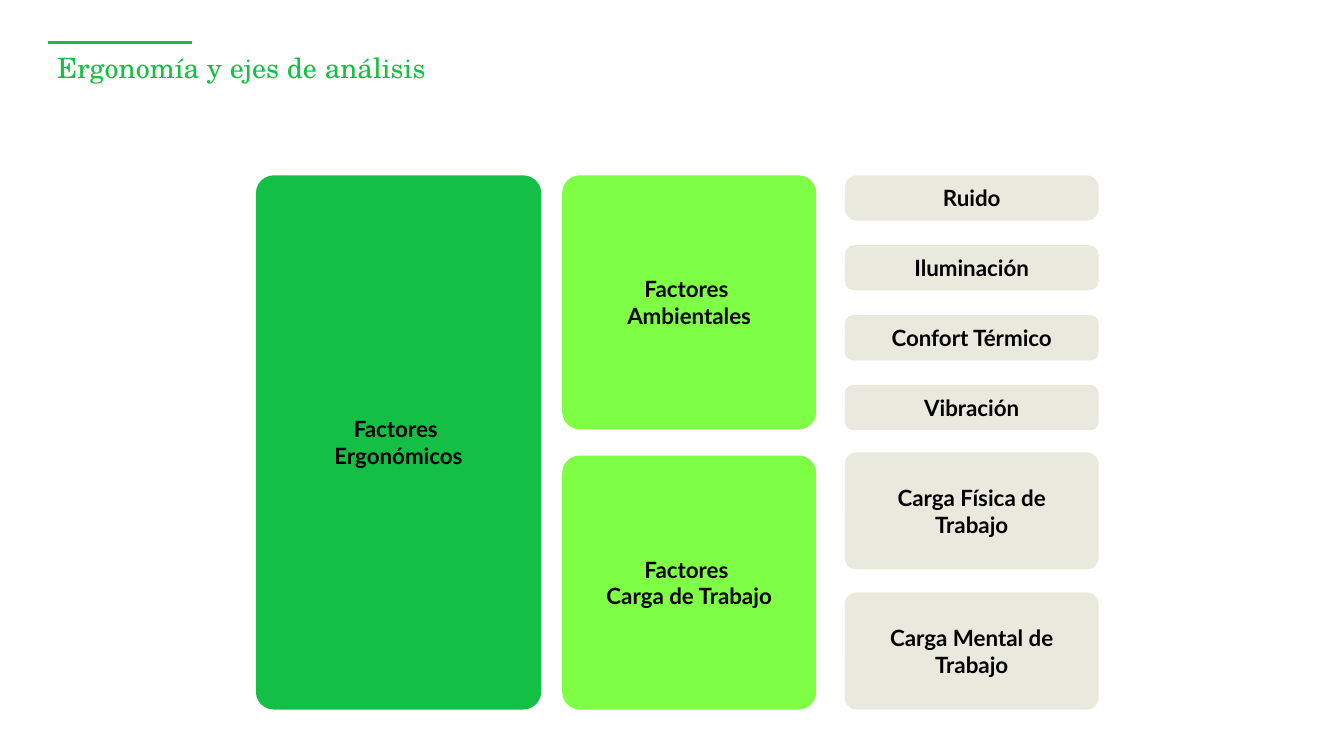
from dataclasses import dataclass

from lxml import etree
from pptx import Presentation
from pptx.dml.color import RGBColor
from pptx.enum import shapes, text
from pptx.oxml import ns
from pptx.slide import Slide
from pptx.util import Cm, Pt


@dataclass(frozen=True)
class Theme:
    title_color: RGBColor = RGBColor(0x15, 0xBF, 0x45)
    root_fill: RGBColor = RGBColor(0x13, 0xC0, 0x45)
    group_fill: RGBColor = RGBColor(0x7E, 0xFF, 0x45)
    factor_fill: RGBColor = RGBColor(0xE9, 0xEA, 0xDD)
    label_color: RGBColor = RGBColor(0, 0, 0)
    title_font: str = "TeX Gyre Schola"
    label_font: str = "Lato"
    title_size: int = 20
    label_size: int = 16
    label_spacing: int = 19
    rule_width: float = 1.75


@dataclass(frozen=True)
class Card:
    lines: tuple[str, ...]
    left: float
    top: float
    width: float
    height: float
    radius: float
    fill: RGBColor
    fixed_spacing: bool = True


THEME = Theme()
TOP = 4.42
COLUMN_WIDTH = 6.4
GROUP_LEFT, GROUP_PITCH = 14.17, 7.06
FACTOR_LEFT = 21.29
AMBIENT_HEIGHT, AMBIENT_PITCH = 1.14, 1.76
LOAD_TOP, LOAD_HEIGHT, LOAD_PITCH = 11.4, 2.95, 3.53
PADDING = 0.3

GROUPS = ("Ambientales", "Carga de Trabajo")
AMBIENT_FACTORS = (
    ("Ruido", 0.31),
    ("Iluminación", 0.25),
    ("Confort Térmico", 0.21),
    ("Vibración", 0.21),
)
LOAD_FACTORS = ("Carga Física de Trabajo", "Carga Mental de Trabajo")


def build_cards() -> list[Card]:
    root = Card(("Factores ", "Ergonómicos"), 6.45, TOP, 7.19, 13.46, 0.45, THEME.root_fill)
    groups = [
        Card(("Factores ", name), GROUP_LEFT, TOP + row * GROUP_PITCH,
             COLUMN_WIDTH, COLUMN_WIDTH, 0.44, THEME.group_fill)
        for row, name in enumerate(GROUPS)
    ]
    ambient = [
        Card((name,), FACTOR_LEFT, TOP + row * AMBIENT_PITCH, COLUMN_WIDTH,
             AMBIENT_HEIGHT, radius, THEME.factor_fill, fixed_spacing=False)
        for row, (name, radius) in enumerate(AMBIENT_FACTORS)
    ]
    load = [
        Card((name,), FACTOR_LEFT, LOAD_TOP + row * LOAD_PITCH, COLUMN_WIDTH,
             LOAD_HEIGHT, 0.3, THEME.factor_fill)
        for row, name in enumerate(LOAD_FACTORS)
    ]
    return [root, *groups, *ambient, *load]


def draw_card(page: Slide, card: Card) -> None:
    box = page.shapes.add_shape(
        shapes.MSO_SHAPE.ROUNDED_RECTANGLE,
        Cm(card.left), Cm(card.top), Cm(card.width), Cm(card.height),
    )
    box.adjustments[0] = card.radius / min(card.width, card.height)
    box.shadow.inherit = False
    box.fill.solid()
    box.fill.fore_color.rgb = card.fill
    box.line.fill.background()
    frame = box.text_frame
    frame.word_wrap = True
    frame.vertical_anchor = text.MSO_ANCHOR.MIDDLE
    frame.margin_left = frame.margin_right = Cm(PADDING)
    frame.margin_top = frame.margin_bottom = Cm(PADDING)
    for index, line in enumerate(card.lines):
        para = frame.add_paragraph() if index else frame.paragraphs[0]
        para.alignment = text.PP_ALIGN.CENTER
        if card.fixed_spacing:
            para.line_spacing = Pt(THEME.label_spacing)
        span = para.add_run()
        span.text = line
        span.font.name = THEME.label_font
        span.font.size = Pt(THEME.label_size)
        span.font.bold = True
        span.font.color.rgb = THEME.label_color


def draw_title(page: Slide, title: str) -> None:
    rule = page.shapes.add_connector(
        shapes.MSO_CONNECTOR.STRAIGHT, Cm(1.22), Cm(1.07), Cm(4.83), Cm(1.07)
    )
    rule.line.color.rgb = THEME.title_color
    rule.line.width = Pt(THEME.rule_width)
    etree.SubElement(rule.element.spPr, ns.qn("a:effectLst"))

    box = page.shapes.add_textbox(Cm(1.24), Cm(1.37), Cm(27.41), Cm(1.45))
    frame = box.text_frame
    frame.word_wrap = True
    frame.margin_left = Cm(0.2)
    frame.margin_top = frame.margin_right = frame.margin_bottom = 0
    para = frame.paragraphs[0]
    para.line_spacing = 0.9
    span = para.add_run()
    span.text = title
    span.font.name = THEME.title_font
    span.font.size = Pt(THEME.title_size)
    span.font.color.rgb = THEME.title_color


def main() -> None:
    deck = Presentation()
    deck.slide_width, deck.slide_height = Cm(33.87), Cm(19.05)
    page = deck.slides.add_slide(deck.slide_layouts[6])
    draw_title(page, "Ergonomía y ejes de análisis")
    for card in build_cards():
        draw_card(page, card)
    deck.save("out.pptx")


if __name__ == "__main__":
    main()
